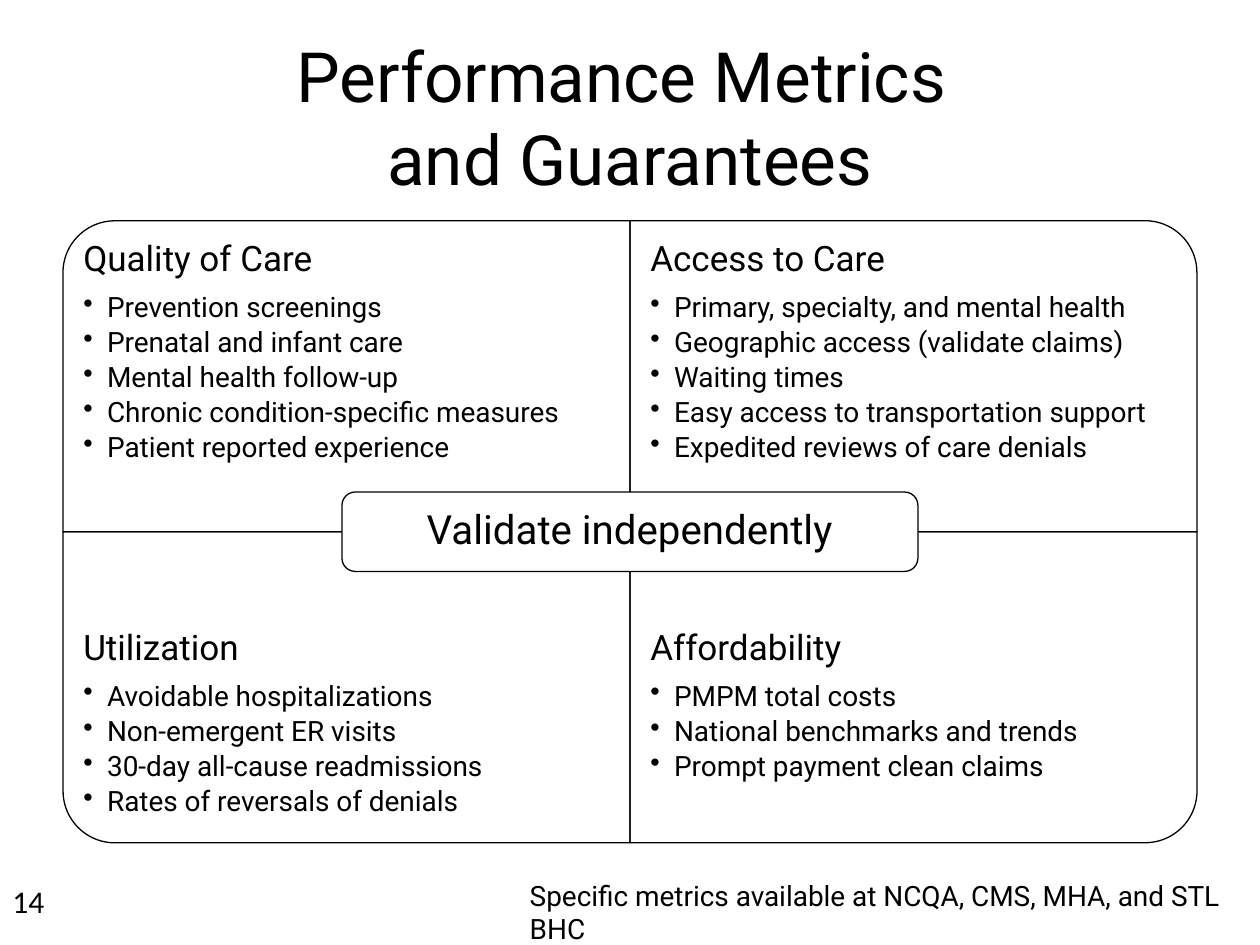
import dataclasses

import pptx
import pptx.dml.color
import pptx.enum.shapes
import pptx.enum.text
import pptx.oxml
import pptx.util

Cm = pptx.util.Cm
Pt = pptx.util.Pt
RGB = pptx.dml.color.RGBColor
SHAPE = pptx.enum.shapes.MSO_SHAPE
ALIGN = pptx.enum.text.PP_ALIGN
ANCHOR = pptx.enum.text.MSO_ANCHOR


@dataclasses.dataclass(frozen=True)
class Theme:
    ink: RGB = RGB(0, 0, 0)
    paper: RGB = RGB(255, 255, 255)
    font: str = "Roboto"
    number_font: str = "Calibri"
    title: float = 39.6
    heading: float = 20
    bullet: float = 16
    center: float = 23
    number: float = 18
    line: float = 0.75


THEME = Theme()
LEFT, TOP, QUAD_W, QUAD_H = 1.27, 4.45, 11.43, 6.27
HEADING_FORMAT = {"line_spacing": 0.9, "space_after": Pt(8.2)}
BULLET_FORMAT = {"level": 1, "line_spacing": 0.9, "space_after": Pt(2.8)}
CENTER_FORMAT = {"alignment": ALIGN.CENTER, "line_spacing": 0.9}

QUADRANTS = [
    (0, 0, 270, "Quality of Care", [
        "Prevention screenings",
        "Prenatal and infant care",
        "Mental health follow-up",
        "Chronic condition-specific measures",
        "Patient reported experience",
    ]),
    (1, 0, 0, "Access to Care", [
        "Primary, specialty, and mental health",
        "Geographic access (validate claims)",
        "Waiting times",
        "Easy access to transportation support",
        "Expedited reviews of care denials",
    ]),
    (0, 1, 180, "Utilization", [
        "Avoidable hospitalizations",
        "Non-emergent ER visits",
        "30-day all-cause readmissions",
        "Rates of reversals of denials",
    ]),
    (1, 1, 90, "Affordability", [
        "PMPM total costs",
        "National benchmarks and trends",
        "Prompt payment clean claims",
    ]),
]


def set_all(target, values):
    for name, value in values.items():
        setattr(target, name, value)


def write(p, text, size, values, font=THEME.font):
    p.text = text
    set_all(p, values)
    for r in p.runs:
        set_all(r.font, {"name": font, "size": Pt(size)})
        r.font.color.rgb = THEME.ink


def add_bullet(p):
    pPr = p._p.get_or_add_pPr()
    pPr.set("marL", str(Cm(0.48)))
    pPr.set("indent", str(-Cm(0.48)))
    pPr.append(pptx.oxml.parse_xml(
        '<a:buChar xmlns:a="http://schemas.openxmlformats.org/drawingml/2006/main" char="•"/>'))


def add_text_box(s, x, y, w, h, inset=None, anchor=ANCHOR.TOP):
    tf = s.shapes.add_textbox(Cm(x), Cm(y), Cm(w), Cm(h)).text_frame
    set_all(tf, {"word_wrap": True, "vertical_anchor": anchor})
    if inset is not None:
        sides = ("left", "top", "right", "bottom")
        set_all(tf, {f"margin_{side}": Cm(inset) for side in sides})
    return tf


def add_outline(s, kind, x, y, w, h, rotation=0):
    if rotation % 180:
        x, y, w, h = x + (w - h) / 2, y + (h - w) / 2, h, w
    sp = s.shapes.add_shape(kind, Cm(x), Cm(y), Cm(w), Cm(h))
    sp.rotation = rotation
    sp.shadow.inherit = False
    sp.line.color.rgb = THEME.ink
    sp.line.width = Pt(THEME.line)
    sp.fill.background()
    return sp


def add_quadrant(s, col, row, rotation, heading, bullets):
    x, y = LEFT + col * QUAD_W, TOP + row * QUAD_H
    add_outline(s, SHAPE.ROUND_1_RECTANGLE, x, y, QUAD_W, QUAD_H, rotation)
    tf = add_text_box(s, x, y + row * QUAD_H / 4, QUAD_W, QUAD_H * 0.75, 0.41)
    write(tf.paragraphs[0], heading, THEME.heading, HEADING_FORMAT)
    for text in bullets:
        p = tf.add_paragraph()
        write(p, text, THEME.bullet, BULLET_FORMAT)
        add_bullet(p)


def add_center(s, text, w=11.61, h=1.6):
    x, y = LEFT + QUAD_W - w / 2, TOP + QUAD_H - h / 2
    sp = add_outline(s, SHAPE.ROUNDED_RECTANGLE, x, y, w, h)
    sp.fill.solid()
    sp.fill.fore_color.rgb = THEME.paper
    tf = add_text_box(s, x, y, w, h, 0.25, ANCHOR.MIDDLE)
    write(tf.paragraphs[0], text, THEME.center, CENTER_FORMAT)


def main():
    prs = pptx.Presentation()
    set_all(prs, {"slide_width": Cm(25.4), "slide_height": Cm(19.05)})
    s = prs.slides.add_slide(prs.slide_layouts[6])

    tf = add_text_box(s, LEFT, 0.76, 2 * QUAD_W, 3.18, anchor=ANCHOR.MIDDLE)
    write(tf.paragraphs[0], "Performance Metrics \vand Guarantees",
          THEME.title, {"alignment": ALIGN.CENTER})

    for quadrant in QUADRANTS:
        add_quadrant(s, *quadrant)
    add_center(s, "Validate independently")

    tf = add_text_box(s, 10.43, 17.58, 14.97, 0.94)
    write(tf.paragraphs[0],
          "Specific metrics available at NCQA, CMS, MHA, and STL BHC",
          THEME.bullet, {})
    tf = add_text_box(s, 0, 17.65, 5.92, 1.02)
    write(tf.paragraphs[0], "14", THEME.number, {}, THEME.number_font)

    prs.save("out.pptx")


if __name__ == "__main__":
    main()
